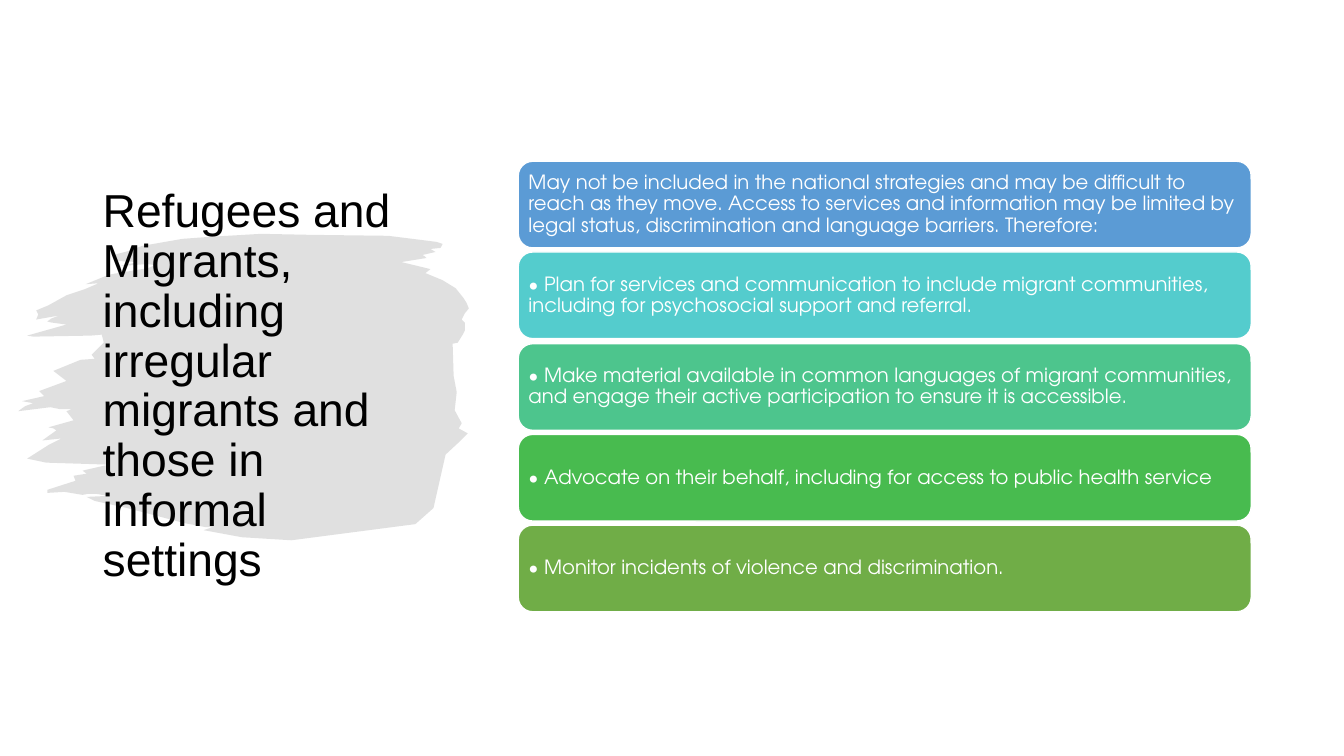
from dataclasses import dataclass

from lxml.etree import SubElement
from pptx import Presentation
from pptx.dml.color import RGBColor
from pptx.enum.shapes import MSO_SHAPE
from pptx.enum.text import MSO_ANCHOR
from pptx.oxml.ns import qn
from pptx.shapes.autoshape import Shape
from pptx.slide import Slide
from pptx.util import Pt

PX = 9144
CARD_LEFT, CARD_TOP, CARD_WIDTH, CARD_HEIGHT = 514, 160, 727, 86
CARD_PITCH = 90.3
TITLE = "Refugees and Migrants, including irregular migrants and those in informal settings"

BRUSH_OUTLINE = [
    (259, 232), (307, 233), (385, 234), (433, 240), (439, 242), (437, 246),
    (427, 247), (432, 250), (419, 253), (421, 254), (423, 256), (398, 260),
    (427, 267), (422, 271), (439, 278), (452, 286), (460, 296), (463, 301),
    (465, 306), (461, 311), (458, 317), (461, 320), (461, 328), (459, 332),
    (454, 340), (449, 341), (450, 373), (453, 389), (451, 407), (458, 420),
    (455, 425), (464, 430), (456, 438), (442, 451), (430, 504), (412, 520),
    (289, 536), (240, 533), (202, 526), (211, 523), (204, 523), (183, 519),
    (126, 504), (94, 497), (86, 493), (107, 492), (96, 490), (87, 490),
    (82, 491), (64, 488), (47, 489), (47, 486), (75, 477), (73, 472),
    (86, 470), (82, 467), (86, 466), (108, 461), (46, 459), (27, 455),
    (49, 441), (61, 435), (42, 437), (56, 427), (53, 425), (48, 424),
    (73, 417), (66, 408), (71, 406), (65, 406), (60, 406), (50, 404),
    (18, 408), (25, 403), (33, 400), (22, 398), (44, 393), (39, 388),
    (66, 378), (53, 368), (80, 357), (94, 356), (91, 352), (103, 340),
    (101, 332), (90, 333), (33, 334), (27, 333), (66, 322), (51, 320),
    (47, 319), (51, 316), (59, 313), (36, 317), (38, 312), (36, 308),
    (48, 303), (66, 293), (84, 287), (98, 281), (85, 282), (107, 273),
    (111, 272), (147, 266), (154, 263), (146, 262), (119, 264), (137, 260),
    (117, 259), (113, 255), (116, 252), (128, 249), (141, 244), (181, 237),
    (208, 235),
]


@dataclass(frozen=True)
class Card:
    """A coloured card and its message."""

    text: str
    fill: str


CARDS = [
    Card("May not be included in the national strategies and may be difficult to reach as they move. "
         "Access to services and information may be limited by legal status, discrimination and "
         "language barriers. Therefore:", "5B9BD5"),
    Card("• Plan for services and communication to include migrant communities, including for "
         "psychosocial support and referral.", "54CCCD"),
    Card("• Make material available in common languages of migrant communities, and engage their "
         "active participation to ensure it is accessible.", "4DC58D"),
    Card("• Advocate on their behalf, including for access to public health service", "48BB4F"),
    Card("• Monitor incidents of violence and discrimination.", "70AD47"),
]


def color(value: str) -> RGBColor:
    """Turn a hex string into a colour."""
    return RGBColor.from_string(value)


def write_text(box: Shape, text: str, *, font: str, size: int, fill: str,
               inset_x: int, inset_y: int) -> None:
    """Write one wrapped, left-aligned, vertically centred paragraph."""
    frame = box.text_frame
    frame.word_wrap = True
    frame.vertical_anchor = MSO_ANCHOR.MIDDLE
    frame.margin_left = frame.margin_right = inset_x * PX
    frame.margin_top = frame.margin_bottom = inset_y * PX
    para = frame.paragraphs[0]
    para.alignment = 1
    para.line_spacing = 0.9
    span = para.add_run()
    span.text = text
    span.font.name = font
    span.font.size = Pt(size)
    span.font.color.rgb = color(fill)


def draw_brush(page: Slide) -> None:
    """Draw the translucent brush stroke behind the title."""
    builder = page.shapes.build_freeform(*BRUSH_OUTLINE[0], scale=PX)
    builder.add_line_segments(BRUSH_OUTLINE[1:], close=True)
    brush = builder.convert_to_shape()
    brush.shadow.inherit = False
    brush.line.fill.background()
    brush.fill.solid()
    brush.fill.fore_color.rgb = color("D9D9D9")
    shade = brush.element.spPr.find(qn("a:solidFill")).find(qn("a:srgbClr"))
    SubElement(shade, qn("a:alpha"), val="80000")


def draw_card(page: Slide, card: Card, top: int) -> None:
    """Draw one rounded card with its message."""
    box = page.shapes.add_shape(MSO_SHAPE.ROUNDED_RECTANGLE, CARD_LEFT * PX, top * PX,
                                CARD_WIDTH * PX, CARD_HEIGHT * PX)
    box.shadow.inherit = False
    box.fill.solid()
    box.fill.fore_color.rgb = color(card.fill)
    box.line.color.rgb = color("FFFFFF")
    box.line.width = Pt(1)
    write_text(box, card.text, font="TeX Gyre Adventor", size=14, fill="FFFFFF",
               inset_x=6, inset_y=6)


def main() -> None:
    """Build and save the slide."""
    deck = Presentation()
    deck.slide_width, deck.slide_height = 1333 * PX, 750 * PX
    page = deck.slides.add_slide(deck.slide_layouts[6])
    draw_brush(page)
    title = page.shapes.add_textbox(92 * PX, 164 * PX, 352 * PX, 440 * PX)
    write_text(title, TITLE, font="Arial", size=33, fill="000000", inset_x=10, inset_y=5)
    for index, card in enumerate(CARDS):
        draw_card(page, card, CARD_TOP + round(index * CARD_PITCH))
    deck.save("out.pptx")


if __name__ == "__main__":
    main()
